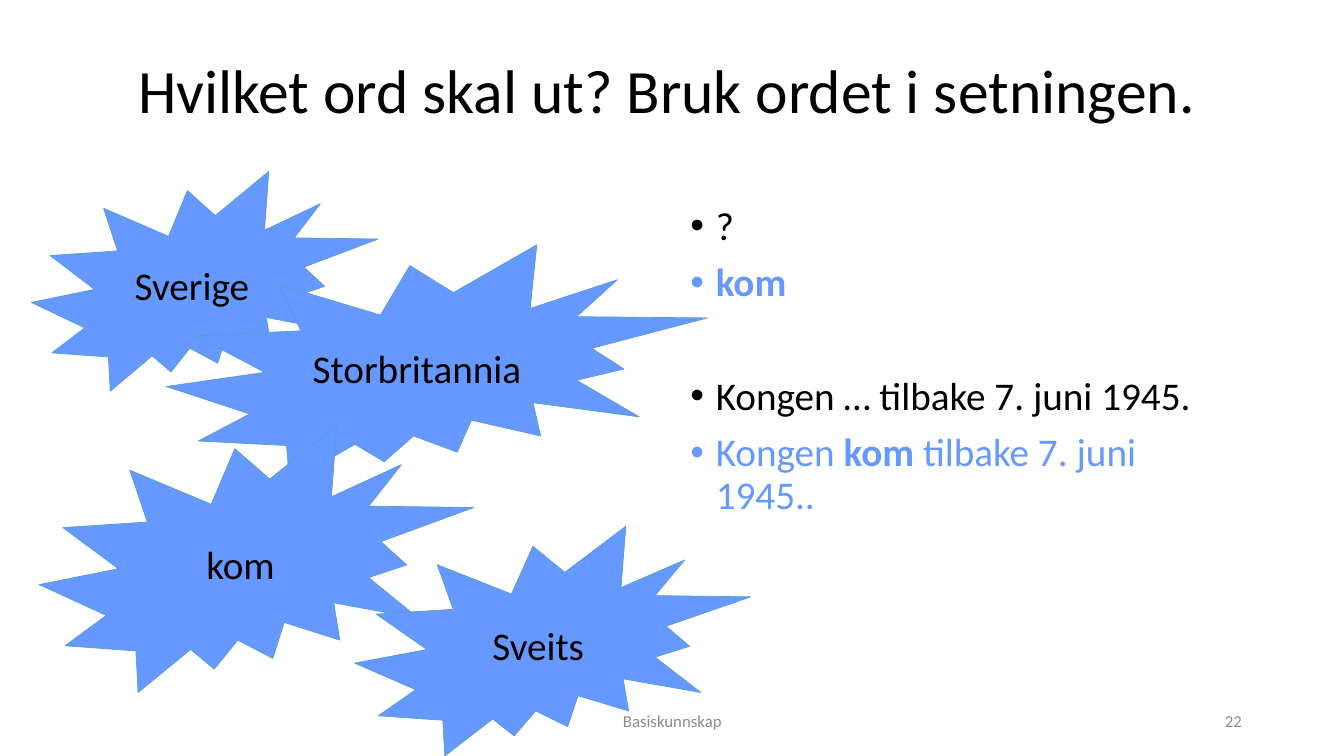
from dataclasses import dataclass

from lxml.etree import SubElement as Sub
from pptx import Presentation
from pptx.dml.color import RGBColor as Rgb
from pptx.enum.shapes import MSO_SHAPE as Shape
from pptx.enum.text import MSO_ANCHOR as Anchor, PP_ALIGN as Align
from pptx.oxml.ns import qn
from pptx.util import Cm, Pt


@dataclass(frozen=True)
class Theme:
    font: str = "Calibri"
    ink: str = "000000"
    blue: str = "6699FF"
    edge: str = "5B9BD5"
    grey: str = "8C8C8C"
    head: int = 44
    body: int = 28
    small: int = 12


theme = Theme()


def write(para, text, size=theme.body, color=theme.ink, bold=False):
    """Add one formatted run to a paragraph."""
    run = para.add_run()
    run.text = text
    font = run.font
    font.name, font.size, font.bold = theme.font, Pt(size), bold
    font.color.rgb = Rgb.from_string(color)


def frame(slide, box, anchor=Anchor.MIDDLE):
    """Add a wrapping text box and return its text frame."""
    area = slide.shapes.add_textbox(*map(Cm, box)).text_frame
    area.word_wrap = True
    area.vertical_anchor = anchor
    return area


def label(slide, box, text, align=Align.LEFT, **style):
    para = frame(slide, box).paragraphs[0]
    para.alignment = align
    para.line_spacing = 0.9 if style.get("size") == theme.head else 1.0
    write(para, text, **style)


def bullet(para):
    props = para._p.get_or_add_pPr()
    props.set("marL", str(Cm(0.64)))
    props.set("indent", str(Cm(-0.64)))
    Sub(props, qn("a:buFont"), typeface="Arial")
    Sub(props, qn("a:buChar"), char="•")


# Bulleted answers: each item is (space before, colour, [(text, bold)])
def points(slide, box, items):
    area = frame(slide, box, Anchor.TOP)
    for i, (gap, color, parts) in enumerate(items):
        para = area.add_paragraph() if i else area.paragraphs[0]
        para.line_spacing = 0.9
        para.space_before = Pt(gap)
        bullet(para)
        for text, bold in parts:
            write(para, text, color=color, bold=bold)


# Word inside a jagged burst
def burst(slide, box, word):
    star = slide.shapes.add_shape(Shape.EXPLOSION2, *map(Cm, box))
    star.shadow.inherit = False
    star.fill.solid()
    star.fill.fore_color.rgb = Rgb.from_string(theme.blue)
    star.line.color.rgb = Rgb.from_string(theme.edge)
    star.line.width = Pt(0.5)
    area = star.text_frame
    area.vertical_anchor = Anchor.MIDDLE
    para = area.paragraphs[0]
    para.alignment = Align.CENTER
    write(para, word)


# Footer row: centred name and page number
def footer(slide, box, name, page):
    left, top, width, height = box
    side = 7.62
    label(slide, (left, top, 11.43, height), name, Align.CENTER,
          size=theme.small, color=theme.grey)
    label(slide, (left + width - side, top, side, height), page, Align.RIGHT,
          size=theme.small, color=theme.grey)


def main():
    deck = Presentation()
    deck.slide_width, deck.slide_height = Cm(33.87), Cm(19.05)
    slide = deck.slides.add_slide(deck.slide_layouts[6])

    label(slide, (3.23, 0.51, 29.21, 3.68),
          "Hvilket ord skal ut? Bruk ordet i setningen.", size=theme.head)

    points(slide, (17.15, 5.08, 14.4, 12.09), [
        (10, theme.ink, [("?", False)]),
        (10, theme.blue, [("kom", True)]),
        (51, theme.ink, [("Kongen … tilbake 7. juni 1945.", False)]),
        (10, theme.blue, [("Kongen ", False), ("kom ", True),
                          ("tilbake 7. juni 1945..", False)]),
    ])

    for word, box in (
        ("Sverige", (0.79, 4.32, 8.74, 5.54)),
        ("Storbritannia", (4.19, 6.17, 13.64, 5.99)),
        ("kom", (0.99, 10.72, 10.95, 6.73)),
        ("Sveits", (8.94, 13.26, 9.98, 5.79)),
    ):
        burst(slide, box, word)

    footer(slide, (11.23, 17.65, 20.32, 1.02), "Basiskunnskap", "22")
    deck.save("out.pptx")


if __name__ == "__main__":
    main()
